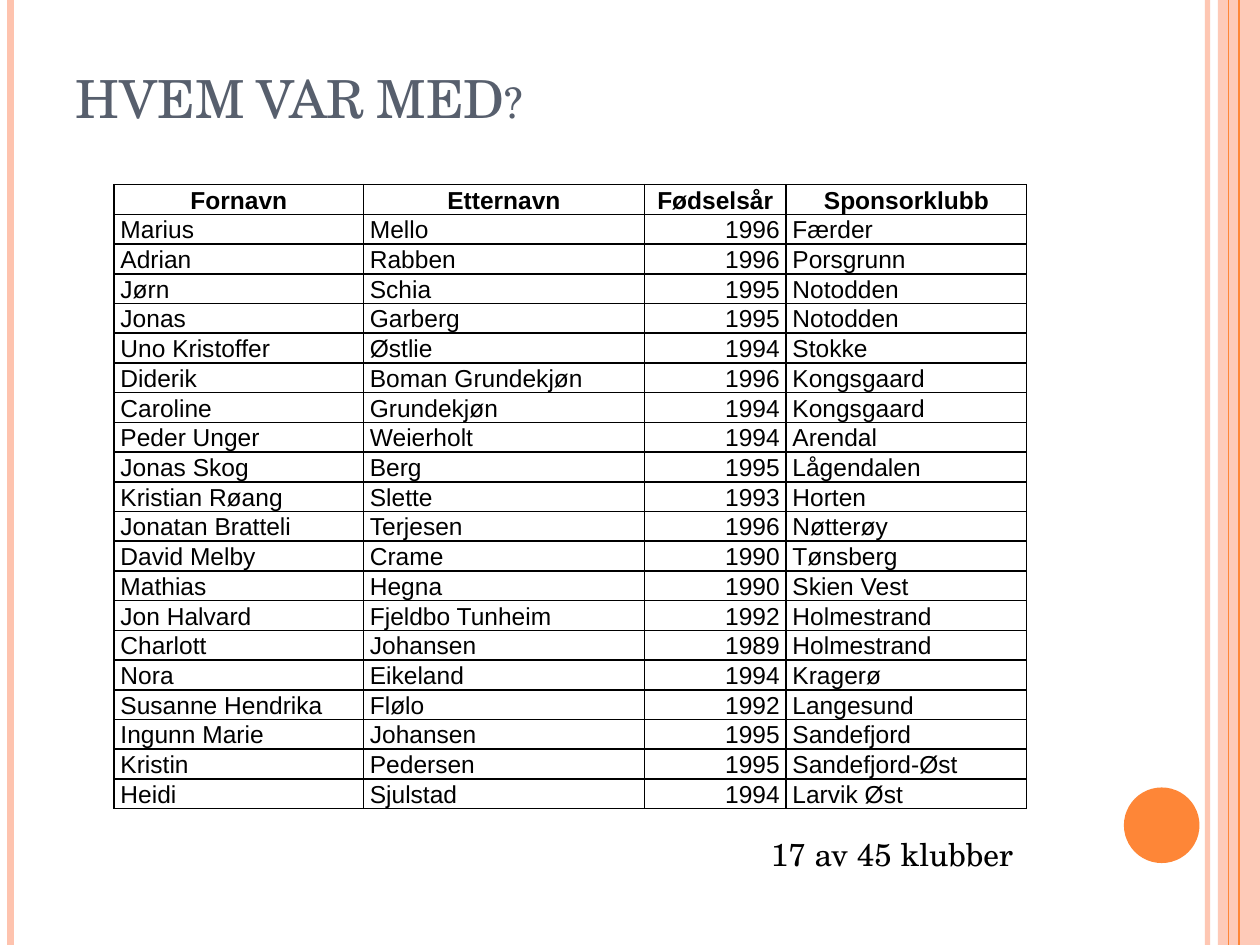
from lxml.etree import SubElement
from pptx import Presentation
from pptx.dml.color import RGBColor
from pptx.enum.shapes import MSO_CONNECTOR, MSO_SHAPE
from pptx.enum.text import MSO_ANCHOR, PP_ALIGN
from pptx.oxml.ns import qn
from pptx.util import Pt


def paint(fill, color, alpha=100):
    fill.solid()
    fill.fore_color.rgb = RGBColor.from_string(color)
    if alpha < 100:
        node = fill._xPr.find(qn("a:solidFill"))[0]
        SubElement(node, qn("a:alpha"), val=str(alpha * 1000))


def style(font, name, size, color):
    font.name = name
    font.size = Pt(size)
    paint(font.fill, color)


deck = Presentation()
deck.slide_width, deck.slide_height = Pt(720), Pt(540)
page = deck.slides.add_slide(deck.slide_layouts[5])
paint(page.background.fill, "FFFFFF")

band = page.shapes.add_shape(MSO_SHAPE.RECTANGLE, Pt(696), 0, Pt(24), Pt(540))
dot = page.shapes.add_shape(MSO_SHAPE.OVAL, Pt(642.25), Pt(450), Pt(43.2), Pt(43.2))
for shape, color, alpha in [(band, "FEC3AE", 87), (dot, "FE8637", 100)]:
    shape.shadow.inherit = False
    paint(shape.fill, color, alpha)
    shape.line.fill.background()

for x, color, width, alpha in [
    (690, "FEC3AE", 3, 93),
    (6, "FEC3AE", 4.5, 100),
    (708, "FE8637", 1.5, 100),
    (702, "FE8637", 0.75, 100),
]:
    stripe = page.shapes.add_connector(MSO_CONNECTOR.STRAIGHT, Pt(x), 0, Pt(x), Pt(540))
    stripe.line.width = Pt(width)
    paint(stripe.line.fill, color, alpha)
    SubElement(stripe._element.spPr, qn("a:effectLst"))

title = page.shapes.title
title.left, title.top, title.width, title.height = Pt(36), Pt(21.6), Pt(588), Pt(55.5)
title.text_frame.text = "HVEM VAR MED?"
title.text_frame.vertical_anchor = MSO_ANCHOR.BOTTOM
title.text_frame.paragraphs[0].alignment = PP_ALIGN.LEFT
span = title.text_frame.paragraphs[0].runs[0]
style(span.font, "TeX Gyre Schola", 30, "575F6D")
span._r.get_or_add_rPr().set("cap", "small")

rows = [
    ("Fornavn", "Etternavn", "Fødselsår", "Sponsorklubb"),
    ("Marius", "Mello", "1996", "Færder"),
    ("Adrian", "Rabben", "1996", "Porsgrunn"),
    ("Jørn", "Schia", "1995", "Notodden"),
    ("Jonas", "Garberg", "1995", "Notodden"),
    ("Uno Kristoffer", "Østlie", "1994", "Stokke"),
    ("Diderik", "Boman Grundekjøn", "1996", "Kongsgaard"),
    ("Caroline", "Grundekjøn", "1994", "Kongsgaard"),
    ("Peder Unger", "Weierholt", "1994", "Arendal"),
    ("Jonas Skog", "Berg", "1995", "Lågendalen"),
    ("Kristian Røang", "Slette", "1993", "Horten"),
    ("Jonatan Bratteli", "Terjesen", "1996", "Nøtterøy"),
    ("David Melby", "Crame", "1990", "Tønsberg"),
    ("Mathias", "Hegna", "1990", "Skien Vest"),
    ("Jon Halvard", "Fjeldbo Tunheim", "1992", "Holmestrand"),
    ("Charlott", "Johansen", "1989", "Holmestrand"),
    ("Nora", "Eikeland", "1994", "Kragerø"),
    ("Susanne Hendrika", "Flølo", "1992", "Langesund"),
    ("Ingunn Marie", "Johansen", "1995", "Sandefjord"),
    ("Kristin", "Pedersen", "1995", "Sandefjord-Øst"),
    ("Heidi", "Sjulstad", "1994", "Larvik Øst"),
]
widths = [142.5, 160.5, 81, 137.5]
row_height = 17
table = page.shapes.add_table(
    len(rows), len(widths), Pt(65.25), Pt(105.5), Pt(sum(widths)), Pt(row_height * len(rows))
).table
table.first_row = table.horz_banding = False
for column, width in zip(table.columns, widths):
    column.width = Pt(width)

for r, row in enumerate(rows):
    table.rows[r].height = Pt(row_height)
    for c, text in enumerate(row):
        cell = table.cell(r, c)
        cell.margin_left = cell.margin_right = Pt(3.6)
        cell.margin_top = cell.margin_bottom = 0
        cell.vertical_anchor = MSO_ANCHOR.BOTTOM
        cell.text_frame.text = text
        para = cell.text_frame.paragraphs[0]
        body_alignment = PP_ALIGN.RIGHT if c == 2 else PP_ALIGN.LEFT
        para.alignment = PP_ALIGN.CENTER if r == 0 else body_alignment
        span = para.runs[0]
        style(span.font, "Arial", 14, "000000")
        span.font.bold = r == 0
        properties = cell._tc.get_or_add_tcPr()
        for side in ("lnL", "lnR", "lnT", "lnB"):
            border = SubElement(properties, qn(f"a:{side}"), w=str(Pt(1)))
            border_fill = SubElement(border, qn("a:solidFill"))
            SubElement(border_fill, qn("a:srgbClr"), val="000000")
        cell.fill.background()

box = page.shapes.add_textbox(Pt(433.5), Pt(473.75), Pt(164), Pt(29))
box.text_frame.word_wrap = True
box.text_frame.text = "17 av 45 klubber"
style(box.text_frame.paragraphs[0].runs[0].font, "TeX Gyre Schola", 18, "000000")

deck.save("out.pptx")
